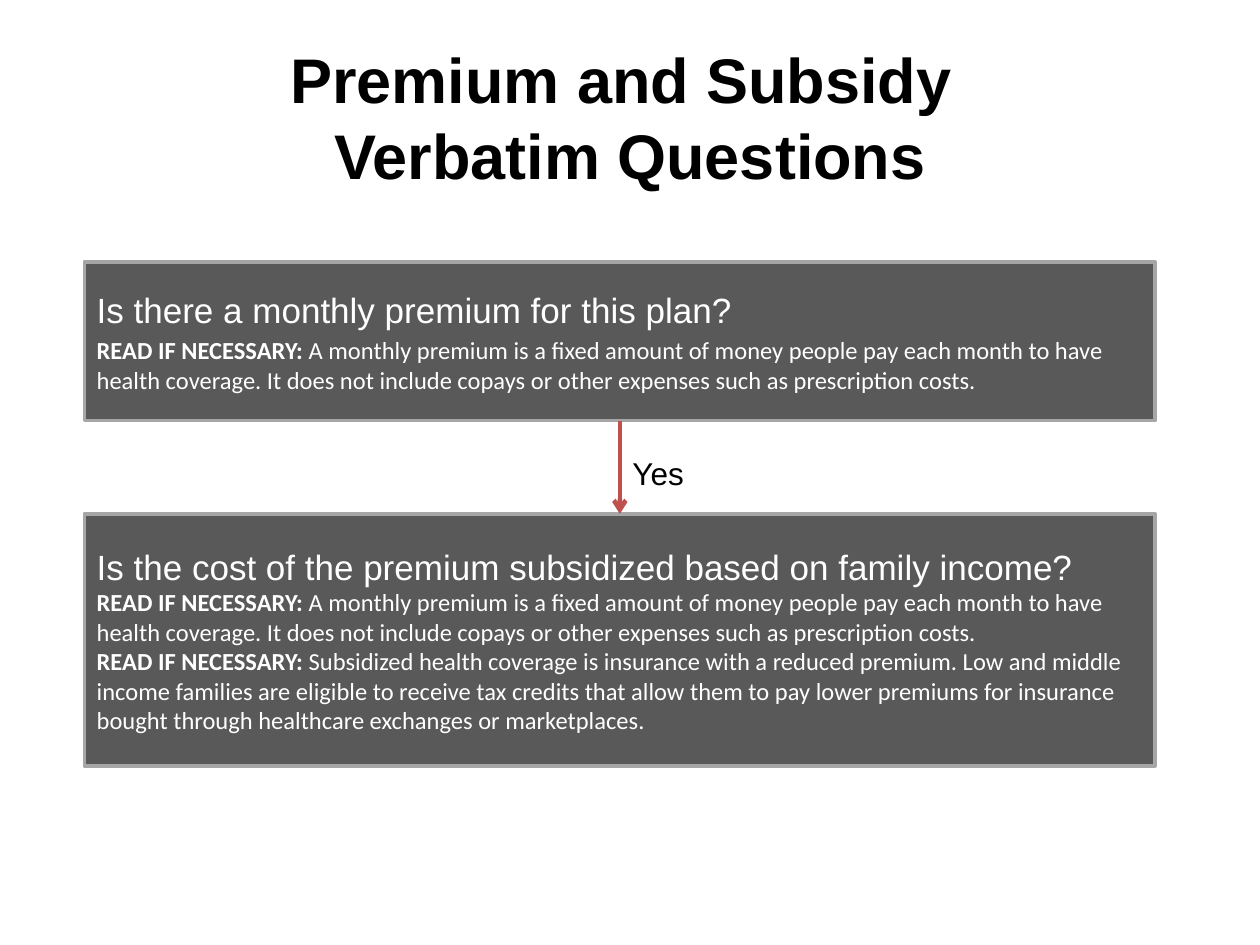
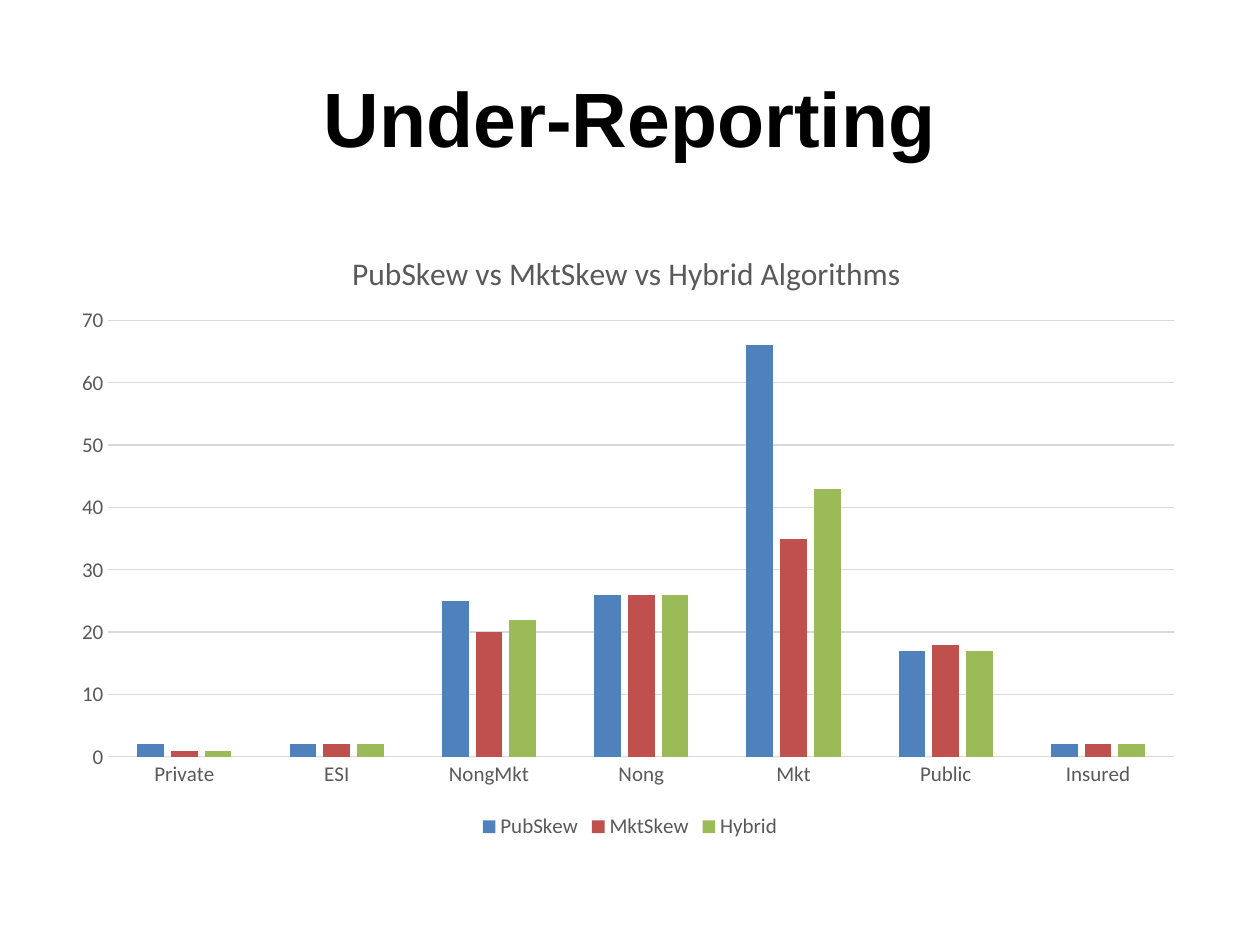
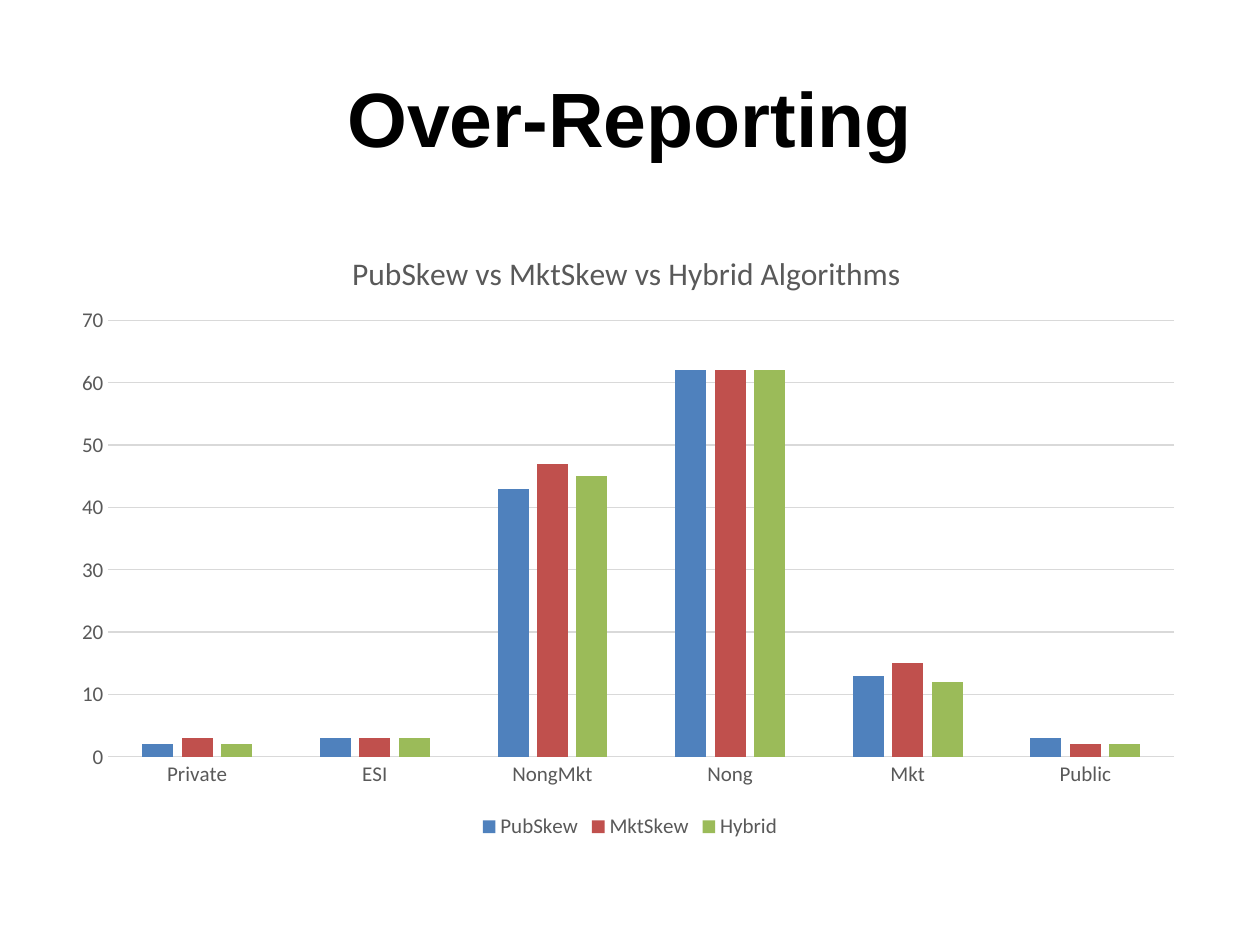
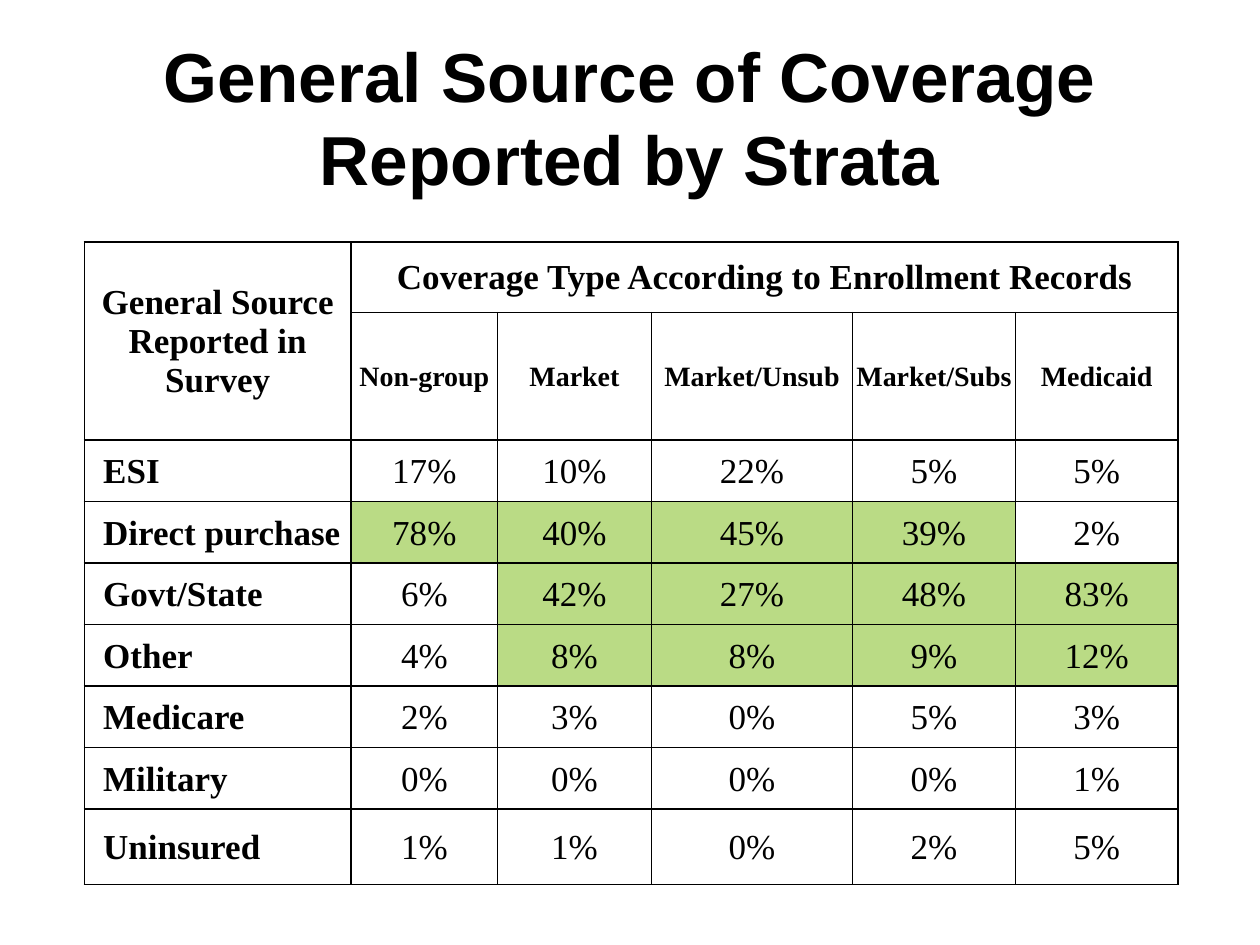
from dataclasses import dataclass

from lxml import etree
from pptx import Presentation
from pptx.chart.data import CategoryChartData
from pptx.dml.color import RGBColor
from pptx.enum.chart import XL_CHART_TYPE as ChartType
from pptx.enum.chart import XL_LEGEND_POSITION as LegendPosition
from pptx.enum.chart import XL_TICK_MARK as TickMark
from pptx.enum.shapes import MSO_CONNECTOR as Connector
from pptx.enum.shapes import MSO_SHAPE as Shape
from pptx.enum.text import MSO_ANCHOR as Anchor
from pptx.enum.text import PP_ALIGN as Align
from pptx.oxml.ns import qn
from pptx.util import Cm, Pt


@dataclass(frozen=True)
class Theme:
    black: str = "000000"
    white: str = "FFFFFF"
    box_fill: str = "595959"
    box_line: str = "A6A6A6"
    arrow: str = "C0504D"
    chart_text: str = "595959"
    grid: str = "D9D9D9"
    highlight: str = "BADB85"
    series: tuple = ("4F81BD", "C0504D", "9BBB59")
    heading_font: str = "Arial"
    body_font: str = "Calibri"
    table_font: str = "Times New Roman"
    title_size: float = 44
    question_size: float = 20
    note_size: float = 14
    label_size: float = 18
    chart_title_size: float = 18
    chart_size: float = 12
    table_size: float = 20
    column_size: float = 16


THEME = Theme()
SERIES_NAMES = ("PubSkew", "MktSkew", "Hybrid")
CHART_TITLE = "PubSkew vs MktSkew vs Hybrid Algorithms"

NOTE_LABEL = "READ IF NECESSARY:"
PREMIUM_NOTE = (
    " A monthly premium is a fixed amount of money people pay each month to have health coverage. "
    "It does not include copays or other expenses such as prescription costs."
)
SUBSIDY_NOTE = (
    " Subsidized health coverage is insurance with a reduced premium. Low and middle income families "
    "are eligible to receive tax credits that allow them to pay lower premiums for insurance bought "
    "through healthcare exchanges or marketplaces."
)

COLUMN_WIDTHS = (5.38, 2.95, 3.1, 4.06, 3.28, 3.28)
ROW_HEIGHTS = (1.42, 2.39, *[1.24] * 6, 1.52)
STRATA = ("Non-group", "Market", "Market/Unsub", "Market/Subs", "Medicaid")
COVERAGE = {
    "ESI": (17, 10, 22, 5, 5),
    "Direct purchase": (78, 40, 45, 39, 2),
    "Govt/State": (6, 42, 27, 48, 83),
    "Other": (4, 8, 8, 9, 12),
    "Medicare": (2, 3, 0, 5, 3),
    "Military": (0, 0, 0, 0, 1),
    "Uninsured": (1, 1, 0, 2, 5),
}
HIGHLIGHTED = {
    "Direct purchase": STRATA[:4],
    "Govt/State": STRATA[1:],
    "Other": STRATA[1:],
}


def rgb(value):
    return RGBColor.from_string(value)


def style_font(font, name, size, color, bold=False):
    font.name = name
    font.size = Pt(size)
    font.bold = bold
    font.color.rgb = rgb(color)


def add_slide(presentation, title, size=THEME.title_size):
    slide = presentation.slides.add_slide(presentation.slide_layouts[6])
    box = slide.shapes.add_textbox(Cm(1.27), Cm(0.76), Cm(22.86), Cm(3.18))
    text_frame = box.text_frame
    text_frame.word_wrap = True
    text_frame.vertical_anchor = Anchor.MIDDLE
    text_frame.text = title
    paragraph = text_frame.paragraphs[0]
    paragraph.alignment = Align.CENTER
    for run in paragraph.runs:
        style_font(run.font, THEME.heading_font, size, THEME.black, True)
    return slide


def add_question(slide, top, height, question, notes, note_gap=0):
    box = slide.shapes.add_shape(Shape.RECTANGLE, Cm(1.7), Cm(top), Cm(21.59), Cm(height))
    box.shadow.inherit = False
    box.fill.solid()
    box.fill.fore_color.rgb = rgb(THEME.box_fill)
    box.line.color.rgb = rgb(THEME.box_line)
    box.line.width = Pt(2)
    text_frame = box.text_frame
    text_frame.word_wrap = True
    text_frame.vertical_anchor = Anchor.MIDDLE
    text_frame.text = question
    heading = text_frame.paragraphs[0]
    heading.alignment = Align.LEFT
    style_font(heading.runs[0].font, THEME.heading_font, THEME.question_size, THEME.white)
    for note in notes:
        paragraph = text_frame.add_paragraph()
        paragraph.alignment = Align.LEFT
        paragraph.space_before = Pt(note_gap)
        for text, bold in ((NOTE_LABEL, True), (note, False)):
            run = paragraph.add_run()
            run.text = text
            style_font(run.font, THEME.body_font, THEME.note_size, THEME.white, bold)
    return box


def add_arrow(slide, upper, lower):
    arrow = slide.shapes.add_connector(Connector.STRAIGHT, 0, 0, 0, 0)
    arrow.begin_connect(upper, 2)
    arrow.end_connect(lower, 0)
    arrow.line.color.rgb = rgb(THEME.arrow)
    arrow.line.width = Pt(2.5)
    properties = arrow.element.spPr
    etree.SubElement(properties.find(qn("a:ln")), qn("a:tailEnd"), type="arrow")
    etree.SubElement(properties, qn("a:effectLst"))


def add_label(slide, text, left, top, width, height):
    box = slide.shapes.add_textbox(Cm(left), Cm(top), Cm(width), Cm(height))
    box.text_frame.text = text
    run = box.text_frame.paragraphs[0].runs[0]
    style_font(run.font, THEME.heading_font, THEME.label_size, THEME.black)


def place_chart_part(element, position, **settings):
    for old_layout in element.findall(qn("c:layout")):
        element.remove(old_layout)
    layout = etree.Element(qn("c:layout"))
    manual = etree.SubElement(layout, qn("c:manualLayout"))
    for name, value in settings.items():
        etree.SubElement(manual, qn(f"c:{name}"), val=str(value))
    element.insert(position, layout)


def style_axis(axis):
    axis.major_tick_mark = TickMark.NONE
    axis.minor_tick_mark = TickMark.NONE
    style_font(axis.tick_labels.font, THEME.body_font, THEME.chart_size, THEME.chart_text)


def style_line(line):
    line.color.rgb = rgb(THEME.grid)
    line.width = Pt(0.75)


def add_column_chart(slide, categories, values):
    chart_data = CategoryChartData(number_format="0")
    chart_data.categories = categories
    for name, numbers in zip(SERIES_NAMES, values):
        chart_data.add_series(name, numbers)
    chart = slide.shapes.add_chart(
        ChartType.COLUMN_CLUSTERED, Cm(1.27), Cm(4.45), Cm(22.86), Cm(12.57), chart_data
    ).chart
    style_font(chart.font, THEME.body_font, 10, THEME.black)

    chart.has_title = True
    title = chart.chart_title
    title.text_frame.text = CHART_TITLE
    run = title.text_frame.paragraphs[0].runs[0]
    style_font(run.font, THEME.body_font, THEME.chart_title_size, THEME.chart_text)
    place_chart_part(title._element, 1, xMode="edge", yMode="edge", x=0.25, y=0.04)
    place_chart_part(
        chart._chartSpace.chart.plotArea, 0, layoutTarget="inner",
        xMode="edge", yMode="edge", x=0.04, y=0.16, w=0.94, h=0.7,
    )

    chart.has_legend = True
    chart.legend.position = LegendPosition.BOTTOM
    chart.legend.include_in_layout = False
    style_font(chart.legend.font, THEME.body_font, THEME.chart_size, THEME.chart_text)

    style_axis(chart.category_axis)
    style_line(chart.category_axis.format.line)
    value_axis = chart.value_axis
    style_axis(value_axis)
    value_axis.minimum_scale = 0
    value_axis.maximum_scale = 70
    value_axis.major_unit = 10
    value_axis.format.line.fill.background()
    style_line(value_axis.major_gridlines.format.line)

    plot = chart.plots[0]
    plot.gap_width = 219
    plot.overlap = -27
    plot.vary_by_categories = False
    for series, color in zip(plot.series, THEME.series):
        series.format.fill.solid()
        series.format.fill.fore_color.rgb = rgb(color)


def add_cell_borders(cell):
    properties = cell._tc.get_or_add_tcPr()
    for side in ("lnL", "lnR", "lnT", "lnB"):
        border = etree.SubElement(properties, qn(f"a:{side}"), w=str(Pt(1)))
        fill = etree.SubElement(border, qn("a:solidFill"))
        etree.SubElement(fill, qn("a:srgbClr"), val=THEME.black)


def fill_cell(cell, text, size=THEME.table_size, bold=False, align=Align.CENTER, indent=0.03):
    cell.vertical_anchor = Anchor.MIDDLE
    cell.margin_left = Cm(indent)
    cell.margin_right = cell.margin_top = Cm(0.03)
    cell.margin_bottom = 0
    cell.text_frame.text = text
    paragraph = cell.text_frame.paragraphs[0]
    paragraph.alignment = align
    style_font(paragraph.runs[0].font, THEME.table_font, size, THEME.black, bold)


def add_coverage_table(slide):
    table = slide.shapes.add_table(
        len(ROW_HEIGHTS), len(COLUMN_WIDTHS), Cm(1.7), Cm(4.88),
        Cm(sum(COLUMN_WIDTHS)), Cm(sum(ROW_HEIGHTS)),
    ).table
    table.first_row = False
    table.horz_banding = False
    for column, width in zip(table.columns, COLUMN_WIDTHS):
        column.width = Cm(width)
    for row, height in zip(table.rows, ROW_HEIGHTS):
        row.height = Cm(height)
    for cell in table.iter_cells():
        add_cell_borders(cell)
        cell.fill.background()

    table.cell(0, 0).merge(table.cell(1, 0))
    table.cell(0, 1).merge(table.cell(0, len(STRATA)))
    fill_cell(table.cell(0, 0), "General Source Reported in Survey", bold=True)
    fill_cell(table.cell(0, 1), "Coverage Type According to Enrollment Records", bold=True)
    for column, stratum in enumerate(STRATA, 1):
        fill_cell(table.cell(1, column), stratum, THEME.column_size, True)

    for row, (source, shares) in enumerate(COVERAGE.items(), 2):
        fill_cell(table.cell(row, 0), source, bold=True, align=Align.LEFT, indent=0.38)
        for column, (stratum, share) in enumerate(zip(STRATA, shares), 1):
            cell = table.cell(row, column)
            fill_cell(cell, f"{share}%")
            if stratum in HIGHLIGHTED.get(source, ()):
                cell.fill.solid()
                cell.fill.fore_color.rgb = rgb(THEME.highlight)


def main():
    presentation = Presentation()
    presentation.slide_width = Cm(25.4)
    presentation.slide_height = Cm(19.05)

    slide = add_slide(presentation, "Premium and Subsidy \vVerbatim Questions", 36)
    premium = add_question(
        slide, 5.28, 3.2, "Is there a monthly premium for this plan?", [PREMIUM_NOTE], note_gap=2.8
    )
    subsidy = add_question(
        slide, 10.36, 5.08, "Is the cost of the premium subsidized based on family income?",
        [PREMIUM_NOTE, SUBSIDY_NOTE],
    )
    add_arrow(slide, premium, subsidy)
    add_label(slide, "Yes", 12.5, 9.02, 1.55, 1.02)

    categories = ("Private", "ESI", "NongMkt", "Nong", "Mkt", "Public", "Insured")
    slide = add_slide(presentation, "Under-Reporting")
    add_column_chart(slide, categories, (
        (2, 2, 25, 26, 66, 17, 2),
        (1, 2, 20, 26, 35, 18, 2),
        (1, 2, 22, 26, 43, 17, 2),
    ))

    slide = add_slide(presentation, "Over-Reporting")
    add_column_chart(slide, categories[:-1], (
        (2, 3, 43, 62, 13, 3),
        (3, 3, 47, 62, 15, 2),
        (2, 3, 45, 62, 12, 2),
    ))

    slide = add_slide(presentation, "General Source of Coverage Reported by Strata", 39.6)
    add_coverage_table(slide)

    presentation.save("out.pptx")


if __name__ == "__main__":
    main()
